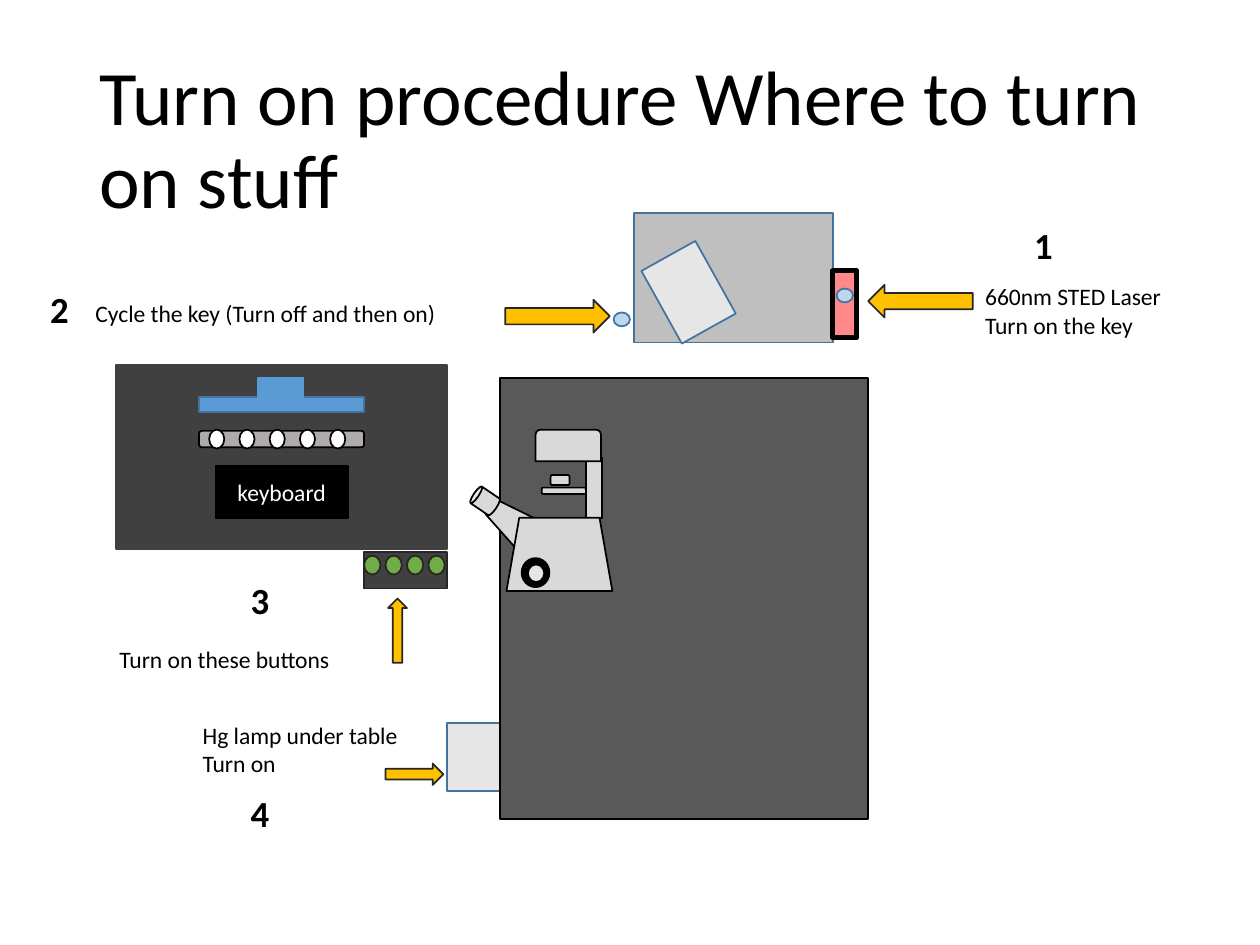
"""Build the slide showing where to turn on each part of the microscope setup."""
from pptx import Presentation
from pptx.dml.color import RGBColor
from pptx.enum.shapes import MSO_SHAPE
from pptx.enum.text import MSO_ANCHOR, PP_ALIGN
from pptx.util import Inches, Pt

BLACK = RGBColor(0x00, 0x00, 0x00)
WHITE = RGBColor(0xFF, 0xFF, 0xFF)
INK = RGBColor(0x26, 0x26, 0x26)
DESK = RGBColor(0x40, 0x40, 0x40)
TABLE = RGBColor(0x59, 0x59, 0x59)
BENCH = RGBColor(0xBF, 0xBF, 0xBF)
STRIP = RGBColor(0xAF, 0xAB, 0xAB)
METAL = RGBColor(0xD9, 0xD9, 0xD9)
PALE = RGBColor(0xE7, 0xE6, 0xE6)
BLUE = RGBColor(0x5B, 0x9B, 0xD5)
BLUE_EDGE = RGBColor(0x43, 0x73, 0x9E)
KEY = RGBColor(0xBD, 0xD7, 0xEE)
LASER = RGBColor(0xFF, 0x89, 0x89)
GREEN = RGBColor(0x70, 0xAD, 0x47)
AMBER = RGBColor(0xFF, 0xC0, 0x00)

prs = Presentation()
prs.slide_width, prs.slide_height = Inches(10), Inches(7.5)
slide = prs.slides.add_slide(prs.slide_layouts[6])


def add_part(kind, box, fill, edge=BLACK, rotation=0, weight=1):
    part = slide.shapes.add_shape(kind, *map(Inches, box))
    part.shadow.inherit = False
    part.fill.solid()
    part.fill.fore_color.rgb = fill
    part.line.color.rgb = edge
    part.line.width = Pt(weight)
    part.rotation = rotation
    return part


def add_text(box, lines, size, bold=False, wrap=False):
    frame = slide.shapes.add_textbox(*map(Inches, box)).text_frame
    frame.word_wrap = wrap
    for index, line in enumerate(lines):
        paragraph = frame.paragraphs[0] if index == 0 else frame.add_paragraph()
        run = paragraph.add_run()
        run.text = line
        run.font.name = "Calibri"
        run.font.size = Pt(size)
        run.font.bold = bold
        run.font.color.rgb = BLACK
    return frame


title = add_text((0.69, 0.4, 8.62, 1.45), ["Turn on procedure Where to turn on stuff"], 44, wrap=True)
title.vertical_anchor = MSO_ANCHOR.MIDDLE
title.paragraphs[0].line_spacing = 0.9

add_part(MSO_SHAPE.RECTANGLE, (3.55, 5.74, 0.59, 0.54), PALE, BLUE_EDGE)
add_part(MSO_SHAPE.RECTANGLE, (5.03, 1.69, 1.58, 1.03), BENCH, BLUE_EDGE)
add_part(MSO_SHAPE.RECTANGLE, (3.97, 3, 2.92, 3.5), TABLE)

add_part(MSO_SHAPE.RECTANGLE, (0.92, 2.9, 2.63, 1.46), DESK, DESK)
add_part(MSO_SHAPE.RECTANGLE, (1.58, 3.15, 1.31, 0.12), BLUE, BLUE_EDGE)
add_part(MSO_SHAPE.RECTANGLE, (2.05, 3, 0.36, 0.16), BLUE, BLUE)
keyboard = add_part(MSO_SHAPE.RECTANGLE, (1.71, 3.7, 1.05, 0.41), BLACK).text_frame
keyboard.vertical_anchor = MSO_ANCHOR.MIDDLE
keyboard.margin_left = keyboard.margin_right = Inches(0.07)
keyboard.margin_top = keyboard.margin_bottom = Inches(0.04)
keyboard.paragraphs[0].alignment = PP_ALIGN.CENTER
keyboard_label = keyboard.paragraphs[0].add_run()
keyboard_label.text = "keyboard"
keyboard_label.font.name = "Calibri"
keyboard_label.font.size = Pt(13.5)
keyboard_label.font.color.rgb = WHITE

add_part(MSO_SHAPE.ROUNDED_RECTANGLE, (1.58, 3.42, 1.31, 0.13), STRIP)
for knob in range(5):
    add_part(MSO_SHAPE.OVAL, (1.66 + 0.24 * knob, 3.41, 0.12, 0.15), WHITE)

for kind, box, rotation in (
    (MSO_SHAPE.TRAPEZOID, (3.9, 3.95, 0.29, 0.37), 307.3),
    (MSO_SHAPE.CAN, (3.77, 3.87, 0.16, 0.21), 304.2),
    (MSO_SHAPE.FLOWCHART_PROCESS, (4.65, 3.63, 0.13, 0.48), 0),
    (MSO_SHAPE.ROUND_2_SAME_RECTANGLE, (4.25, 3.41, 0.52, 0.25), 0),
    (MSO_SHAPE.ROUNDED_RECTANGLE, (4.3, 3.87, 0.35, 0.05), 0),
    (MSO_SHAPE.ROUNDED_RECTANGLE, (4.37, 3.77, 0.15, 0.08), 0),
):
    add_part(kind, box, METAL, rotation=rotation)
microscope_base = add_part(MSO_SHAPE.TRAPEZOID, (4.02, 4.11, 0.84, 0.58), METAL)
microscope_base.adjustments[0] = 0.175
add_part(MSO_SHAPE.OVAL, (4.14, 4.43, 0.22, 0.23), BLACK)
add_part(MSO_SHAPE.OVAL, (4.19, 4.48, 0.13, 0.14), PALE)

add_part(MSO_SHAPE.FLOWCHART_PROCESS, (6.61, 2.15, 0.19, 0.53), LASER, weight=3)
for key_box in ((6.64, 2.29, 0.13, 0.11), (4.87, 2.48, 0.13, 0.11)):
    add_part(MSO_SHAPE.OVAL, key_box, KEY, BLUE_EDGE)
add_part(MSO_SHAPE.RECTANGLE, (5.22, 1.99, 0.49, 0.66), PALE, BLUE_EDGE, 330.9)

add_part(MSO_SHAPE.FLOWCHART_PROCESS, (2.89, 4.38, 0.66, 0.29), DESK, INK)
for button in range(4):
    add_part(MSO_SHAPE.FLOWCHART_CONNECTOR, (2.89 + 0.17 * button, 4.41, 0.13, 0.15), GREEN, INK)

for arrow_box, rotation in (
    ((6.89, 2.26, 0.83, 0.26), 180),
    ((4.01, 2.38, 0.83, 0.26), 0),
    ((2.9, 4.93, 0.51, 0.15), 270),
    ((3.06, 6.06, 0.46, 0.17), 0),
):
    add_part(MSO_SHAPE.RIGHT_ARROW, arrow_box, AMBER, INK, rotation)

for box, lines in (
    ((7.72, 2.19, 1.91, 0.73), ["660nm STED Laser", "Turn on the key"]),
    ((0.66, 2.32, 3.47, 0.43), ["Cycle the key (Turn off and then on)"]),
    ((0.85, 5.07, 2.24, 0.43), ["Turn on these buttons"]),
    ((1.51, 5.67, 2.09, 0.73), ["Hg lamp under table", "Turn on"]),
):
    add_text(box, lines, 13.5)

for box, step in (
    ((8.11, 1.72, 0.41, 0.6), "1"),
    ((0.3, 2.23, 0.35, 0.45), "2"),
    ((1.89, 4.54, 0.41, 0.6), "3"),
    ((1.89, 6.23, 0.41, 0.6), "4"),
):
    add_text(box, [step], 21, bold=True)

prs.save("out.pptx")
